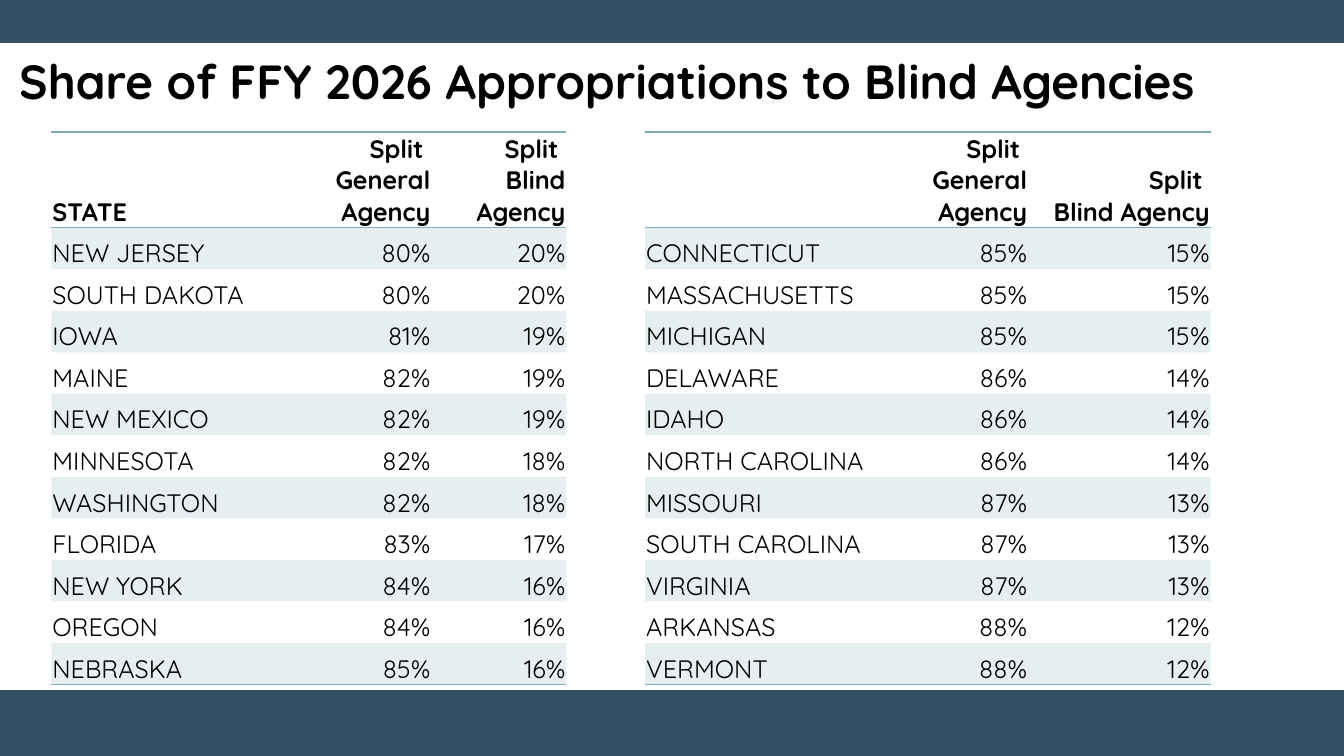
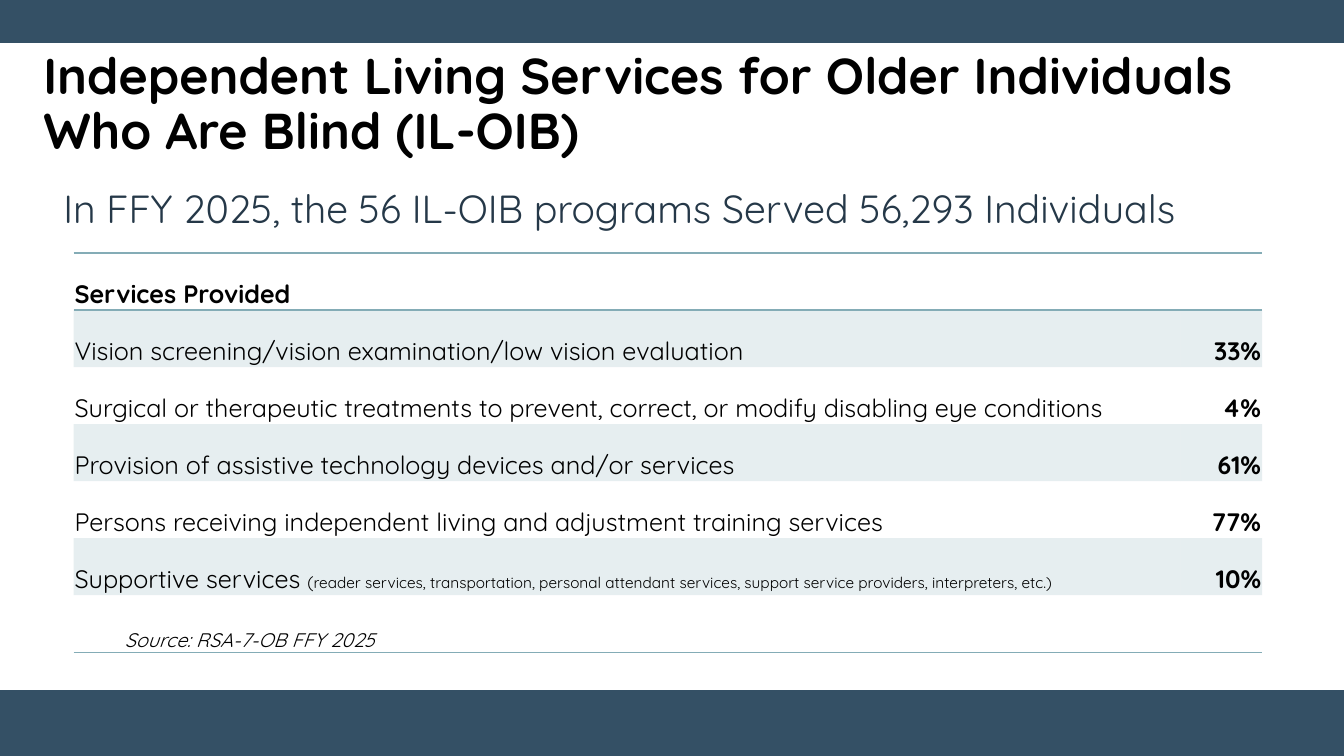
from dataclasses import dataclass

from lxml import etree
from pptx import Presentation
from pptx.dml.color import RGBColor
from pptx.enum.shapes import MSO_SHAPE
from pptx.enum.text import MSO_ANCHOR, MSO_AUTO_SIZE, PP_ALIGN
from pptx.oxml.ns import qn
from pptx.slide import Slide
from pptx.table import _Cell
from pptx.util import Emu, Inches, Pt

RECTANGLE = MSO_SHAPE.RECTANGLE
LEFT, RIGHT = PP_ALIGN.LEFT, PP_ALIGN.RIGHT
MIDDLE, BOTTOM = MSO_ANCHOR.MIDDLE, MSO_ANCHOR.BOTTOM
NO_AUTOFIT = MSO_AUTO_SIZE.NONE

NAVY = RGBColor(0x34, 0x50, 0x65)
INK = RGBColor(0x25, 0x38, 0x48)
BLACK = RGBColor(0, 0, 0)
TEAL = RGBColor(0x84, 0xAC, 0xB6)

FONT = "Quicksand"
TABLE_SIZE = 18
STRIPE_ALPHA = "20000"
PLAIN_TABLE_STYLE = "{2D5ABB26-0587-4C30-8999-92F81FD0307C}"

# Square layout grid: ten units to the inch
UNIT = Inches(0.1)
SLIDE_COLS, SLIDE_ROWS = 133.33, 75
TITLE_ONLY = 5


def grid(units: float) -> Emu:
    return Emu(round(units * UNIT))


@dataclass(frozen=True)
class Area:
    col: float
    row: float
    cols: float
    rows: float

    def lengths(self) -> tuple[Emu, ...]:
        return tuple(grid(n) for n in (self.col, self.row, self.cols, self.rows))


@dataclass(frozen=True)
class Style:
    size: float = TABLE_SIZE
    bold: bool = False
    italic: bool = False
    color: RGBColor = BLACK


@dataclass(frozen=True)
class Entry:
    """Text of one table cell, with an optional smaller remark after it."""
    text: str
    style: Style = Style()
    remark: tuple[tuple[str, float], ...] = ()
    indent: float = 0


@dataclass(frozen=True)
class StripedTable:
    col: float
    row: float
    columns: tuple[float, ...]
    header_rows: float
    body_rows: float
    entries: list[list[Entry]]
    striped: int


HEADING = Style(bold=True)
BANDS = (Area(0, 68.5, SLIDE_COLS, 6.5), Area(0, 0, SLIDE_COLS, 4.2))


def apply_style(paragraph, style: Style) -> None:
    font = paragraph.font
    font.name, font.size = FONT, Pt(style.size)
    font.bold, font.italic = style.bold, style.italic
    font.color.rgb = style.color


def move_bands_to_master(slide: Slide) -> None:
    """Draw the navy bands once, behind everything on the master."""
    master_tree = slide.slide_layout.slide_master.shapes.element
    for area in BANDS:
        band = slide.shapes.add_shape(RECTANGLE, *area.lengths())
        band.shadow.inherit = False
        band.fill.solid()
        band.fill.fore_color.rgb = NAVY
        band.line.color.rgb = NAVY
        band.line.width = Pt(1)
        master_tree.insert(2, band.element)


def set_title(slide: Slide, text: str, area: Area, size: float) -> None:
    title = slide.shapes.title
    title.left, title.top, title.width, title.height = area.lengths()
    frame = title.text_frame
    frame.word_wrap, frame.auto_size = True, NO_AUTOFIT
    frame.vertical_anchor = MIDDLE
    heading = frame.paragraphs[0]
    heading.text = text
    heading.alignment, heading.line_spacing = LEFT, 0.9
    apply_style(heading, Style(size, bold=True))


def add_subtitle(slide: Slide, text: str, area: Area) -> None:
    frame = slide.shapes.add_textbox(*area.lengths()).text_frame
    frame.word_wrap = True
    subtitle = frame.paragraphs[0]
    subtitle.text = text
    subtitle.line_spacing = 0.9
    apply_style(subtitle, Style(28, color=INK))


def add_rule(cell: _Cell, side: str) -> None:
    """Border on one side of a cell: lnT or lnB, top before bottom."""
    properties = cell._tc.get_or_add_tcPr()
    line = etree.SubElement(properties, qn(f"a:{side}"), w=str(Pt(1)))
    fill = etree.SubElement(line, qn("a:solidFill"))
    etree.SubElement(fill, qn("a:srgbClr"), val=str(TEAL))


def add_stripe(cell: _Cell) -> None:
    cell.fill.solid()
    cell.fill.fore_color.rgb = TEAL
    for color in cell._tc.tcPr.findall(f"{qn('a:solidFill')}/{qn('a:srgbClr')}"):
        etree.SubElement(color, qn("a:alpha"), val=STRIPE_ALPHA)


def fill_cell(cell: _Cell, entry: Entry, alignment: PP_ALIGN) -> None:
    cell.vertical_anchor = BOTTOM
    cell.margin_left = grid(0.1 + entry.indent)
    cell.margin_top = cell.margin_right = grid(0.1)
    cell.margin_bottom = 0
    paragraph = cell.text_frame.paragraphs[0]
    paragraph.text = entry.text
    paragraph.alignment = alignment
    apply_style(paragraph, entry.style)
    for text, size in entry.remark:
        run = paragraph.add_run()
        run.text = text
        run.font.size = Pt(size)


def add_striped_table(slide: Slide, spec: StripedTable) -> None:
    body_count = len(spec.entries) - 1
    area = Area(spec.col, spec.row, sum(spec.columns),
                spec.header_rows + spec.body_rows)
    frame = slide.shapes.add_table(body_count + 1, len(spec.columns),
                                   *area.lengths())
    for style_id in frame.element.iter(qn("a:tableStyleId")):
        style_id.text = PLAIN_TABLE_STYLE
    table = frame.table
    table.first_row = table.horz_banding = False
    for column, width in zip(table.columns, spec.columns):
        column.width = grid(width)

    for r, entries in enumerate(spec.entries):
        height = spec.body_rows / body_count if r else spec.header_rows
        table.rows[r].height = grid(height)
        for c, entry in enumerate(entries):
            cell = table.cell(r, c)
            if entry.text:
                fill_cell(cell, entry, RIGHT if c else LEFT)
            if r == 0:
                add_rule(cell, "lnT")
            if r in (0, body_count):
                add_rule(cell, "lnB")
            if r % 2 and r <= spec.striped:
                add_stripe(cell)


def split_table(col: float, columns: tuple[float, ...], state_heading: str,
                shares: list[tuple[str, int, int]]) -> StripedTable:
    headings = (state_heading, "Split \nGeneral Agency", "Split \nBlind Agency")
    entries = [[Entry(text, HEADING) for text in headings]]
    entries += [[Entry(state), Entry(f"{general}%"), Entry(f"{blind}%")]
                for state, general, blind in shares]
    return StripedTable(col, 13.1, columns, 8.1, 45.3, entries, len(shares))


FIRST_STATES = [
    ("NEW JERSEY", 80, 20), ("SOUTH DAKOTA", 80, 20), ("IOWA", 81, 19),
    ("MAINE", 82, 19), ("NEW MEXICO", 82, 19), ("MINNESOTA", 82, 18),
    ("WASHINGTON", 82, 18), ("FLORIDA", 83, 17), ("NEW YORK", 84, 16),
    ("OREGON", 84, 16), ("NEBRASKA", 85, 16),
]
MORE_STATES = [
    ("CONNECTICUT", 85, 15), ("MASSACHUSETTS", 85, 15), ("MICHIGAN", 85, 15),
    ("DELAWARE", 86, 14), ("IDAHO", 86, 14), ("NORTH CAROLINA", 86, 14),
    ("MISSOURI", 87, 13), ("SOUTH CAROLINA", 87, 13), ("VIRGINIA", 87, 13),
    ("ARKANSAS", 88, 12), ("VERMONT", 88, 12),
]
SUPPORT_REMARK = (
    ("(", 12),
    ("reader services, transportation, personal attendant services, "
     "support service providers, interpreters, etc.)", 11),
)
SERVICES = [
    (Entry("Vision screening/vision examination/low vision evaluation"), 33),
    (Entry("Surgical or therapeutic treatments to prevent, correct, "
           "or modify disabling eye conditions"), 4),
    (Entry("Provision of assistive technology devices and/or services"), 61),
    (Entry("Persons receiving independent living and adjustment "
           "training services"), 77),
    (Entry("Supportive services ", remark=SUPPORT_REMARK), 10),
]


def build_appropriations(slide: Slide) -> None:
    set_title(slide, "Share of FFY 2026 Appropriations to Blind Agencies",
              Area(0.9, 3.5, 126.2, 9.6), 34.2)
    add_striped_table(slide, split_table(5.1, (24.8, 12.9, 13.4), "STATE",
                                         FIRST_STATES))
    add_striped_table(slide, split_table(64, (24.5, 13.5, 18.1), "",
                                         MORE_STATES))


def build_independent_living(slide: Slide) -> None:
    set_title(slide, "Independent Living Services for Older Individuals "
              "Who Are Blind (IL-OIB)", Area(3.3, 4.5, 127.9, 12), 36)
    add_subtitle(slide, "In FFY 2025, the 56 IL-OIB programs Served "
                 "56,293 Individuals", Area(5.3, 18.3, 125.1, 7.9))
    source = Entry("Source: RSA-7-OB FFY 2025", Style(14, italic=True), indent=5)
    entries = [[Entry("Services Provided", HEADING), Entry("")]]
    entries += [[service, Entry(f"{share}%", HEADING)]
                for service, share in SERVICES]
    entries.append([source, Entry("")])
    add_striped_table(slide, StripedTable(7.3, 25.1, (109.8, 8.1), 5.66, 33.96,
                                          entries, len(SERVICES)))


def main() -> None:
    deck = Presentation()
    deck.slide_width, deck.slide_height = grid(SLIDE_COLS), grid(SLIDE_ROWS)
    layout = deck.slide_layouts[TITLE_ONLY]
    appropriations = deck.slides.add_slide(layout)
    independent_living = deck.slides.add_slide(layout)
    move_bands_to_master(appropriations)
    build_appropriations(appropriations)
    build_independent_living(independent_living)
    deck.save("out.pptx")


if __name__ == "__main__":
    main()
